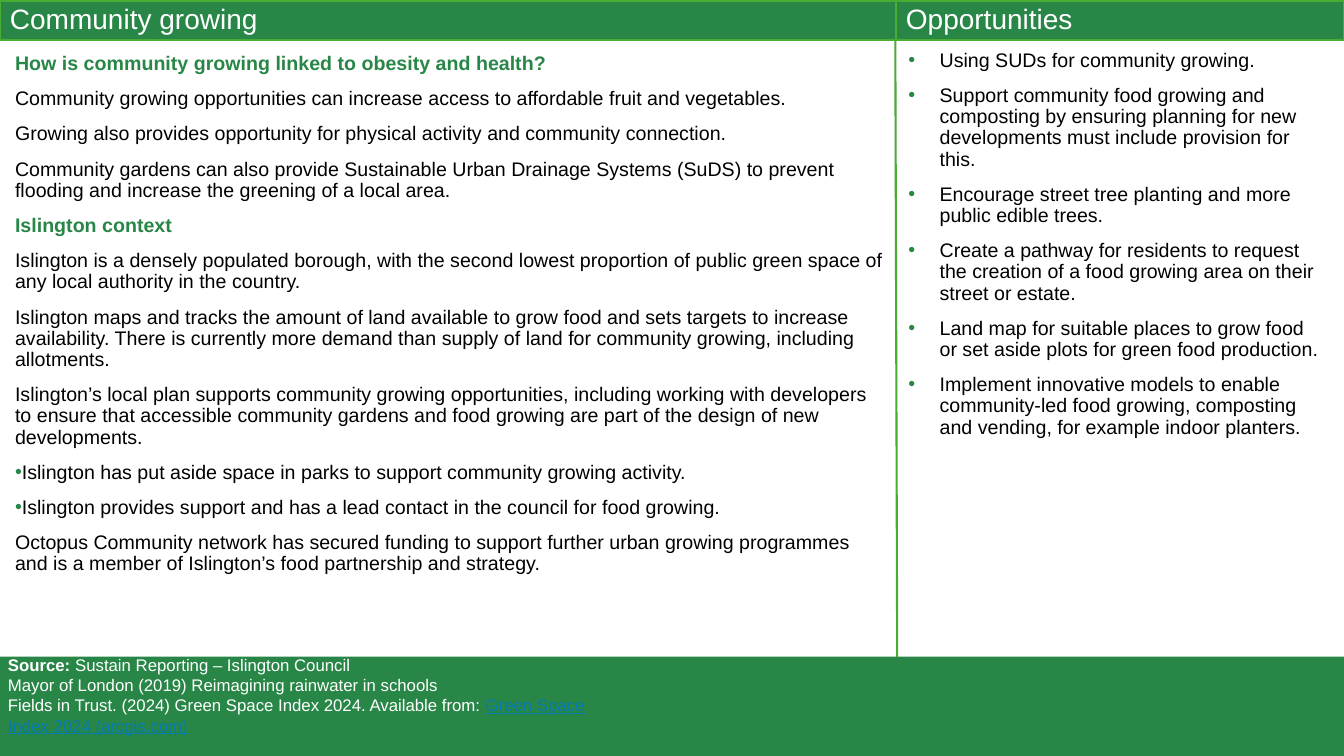
from dataclasses import dataclass

from lxml.etree import SubElement
from pptx import Presentation
from pptx.dml.color import RGBColor
from pptx.enum.shapes import MSO_CONNECTOR, MSO_SHAPE
from pptx.enum.text import MSO_ANCHOR, PP_ALIGN
from pptx.oxml.ns import qn
from pptx.util import Cm, Pt


@dataclass(frozen=True)
class Theme:
    face: str = "Arial"
    green: str = "288647"
    edge: str = "49AC33"
    ink: str = "000000"
    white: str = "FFFFFF"
    link: str = "047CB3"
    title: int = 20
    body: int = 14
    note: int = 12
    gap: int = 10
    lead: float = 0.9
    rule: float = 1.5


def rgb(code):
    return RGBColor.from_string(code)


class Page:
    def __init__(self, slide, theme):
        self.shapes = slide.shapes
        self.theme = theme

    def font(self, para, size, color, bold=False):
        font = para.font
        font.name, font.size, font.bold = self.theme.face, Pt(size), bold
        font.color.rgb = rgb(color)

    def frame(self, shape, anchor, wrap=True):
        """Strip the margins of a shape's text frame and return the frame."""
        frame = shape.text_frame
        frame.margin_left = frame.margin_right = 0
        frame.margin_top = frame.margin_bottom = 0
        frame.vertical_anchor, frame.word_wrap = anchor, wrap
        return frame

    def paras(self, frame, count):
        """Yield count paragraphs, starting with the one already there."""
        for i in range(count):
            yield frame.add_paragraph() if i else frame.paragraphs[0]

    def indent(self, para, left, bullet=False):
        """Set the left indent; a bullet hangs in it."""
        props = para._p.get_or_add_pPr()
        props.set("marL", str(Cm(left)))
        props.set("indent", str(-Cm(left) if bullet else 0))
        if bullet:
            tint = SubElement(props, qn("a:buClr"))
            SubElement(tint, qn("a:srgbClr"), val=self.theme.green)
            SubElement(props, qn("a:buFont"), typeface=self.theme.face)
            SubElement(props, qn("a:buChar"), char="•")

    def block(self, x, y, w, h, edge=None):
        box = self.shapes.add_shape(MSO_SHAPE.RECTANGLE, Cm(x), Cm(y), Cm(w), Cm(h))
        box.shadow.inherit = False
        box.fill.solid()
        box.fill.fore_color.rgb = rgb(self.theme.green)
        if edge:
            box.line.color.rgb = rgb(edge)
            box.line.width = Pt(self.theme.rule)
        else:
            box.line.fill.background()
        return box

    def banner(self, x, y, w, h, text):
        box = self.block(x, y, w, h, self.theme.edge)
        para = self.frame(box, MSO_ANCHOR.MIDDLE).paragraphs[0]
        para.text = text
        para.alignment = PP_ALIGN.LEFT
        para.line_spacing = self.theme.lead
        self.indent(para, 0.25)
        self.font(para, self.theme.title, self.theme.white)

    def rule(self, x1, y1, x2, y2):
        line = self.shapes.add_connector(
            MSO_CONNECTOR.STRAIGHT, Cm(x1), Cm(y1), Cm(x2), Cm(y2))
        line.line.color.rgb = rgb(self.theme.edge)
        line.line.width = Pt(self.theme.rule)
        SubElement(line._element.spPr, qn("a:effectLst"))

    def column(self, x, y, w, h, items, hang=0):
        """Write (kind, text) items, kind being head, text or dot."""
        theme = self.theme
        box = self.shapes.add_textbox(Cm(x), Cm(y), Cm(w), Cm(h))
        frame = self.frame(box, MSO_ANCHOR.TOP)
        for i, para in enumerate(self.paras(frame, len(items))):
            kind, para.text = items[i]
            para.line_spacing = theme.lead
            if i:
                para.space_before = Pt(theme.gap)
            if kind == "dot":
                self.indent(para, hang, True)
            head = kind == "head"
            self.font(para, theme.body, theme.green if head else theme.ink, head)

    def notes(self, x, y, w, h, lines):
        """Write lines of (kind, text) runs, kind being bold, link or plain."""
        theme = self.theme
        box = self.shapes.add_textbox(Cm(x), Cm(y), Cm(w), Cm(h))
        frame = self.frame(box, MSO_ANCHOR.TOP, False)
        for para, line in zip(self.paras(frame, len(lines)), lines):
            self.font(para, theme.note, theme.white)
            for kind, text in line:
                run = para.add_run()
                run.text = text
                if kind == "bold":
                    run.font.bold = True
                elif kind == "link":
                    run.font.underline = True
                    run.font.color.rgb = rgb(theme.link)


GROWING = [
    ("head", "How is community growing linked to obesity and health?"),
    ("text", "Community growing opportunities can increase access to affordable "
             "fruit and vegetables."),
    ("text", "Growing also provides opportunity for physical activity and "
             "community connection."),
    ("text", "Community gardens can also provide Sustainable Urban Drainage Systems "
             "(SuDS) to prevent flooding and increase the greening of a local area."),
    ("head", "Islington context"),
    ("text", "Islington is a densely populated borough, with the second lowest "
             "proportion of public green space of any local authority in the country."),
    ("text", "Islington maps and tracks the amount of land available to grow food "
             "and sets targets to increase availability. There is currently more "
             "demand than supply of land for community growing, including allotments."),
    ("text", "Islington’s local plan supports community growing opportunities, "
             "including working with developers to ensure that accessible community "
             "gardens and food growing are part of the design of new developments."),
    ("dot", "Islington has put aside space in parks to support community growing "
            "activity."),
    ("dot", "Islington provides support and has a lead contact in the council for "
            "food growing."),
    ("text", "Octopus Community network has secured funding to support further urban "
             "growing programmes and is a member of Islington’s food partnership "
             "and strategy."),
]
CHANCES = [
    "Using SUDs for community growing.",
    "Support community food growing and composting by ensuring planning for new "
    "developments must include provision for this.",
    "Encourage street tree planting and more public edible trees.",
    "Create a pathway for residents to request the creation of a food growing area "
    "on their street or estate.",
    "Land map for suitable places to grow food or set aside plots for green food "
    "production.",
    "Implement innovative models to enable community-led food growing, composting "
    "and vending, for example indoor planters.",
]
SOURCES = [
    [("bold", "Source: "), ("plain", "Sustain Reporting – Islington Council")],
    [("plain", "Mayor of London (2019) Reimagining rainwater in schools")],
    [("plain", "Fields in Trust. (2024) Green Space Index 2024. Available from: "),
     ("link", "Green Space Index 2024 (arcgis.com)")],
]


def main():
    deck = Presentation()
    deck.slide_width, deck.slide_height = Cm(33.87), Cm(19.05)
    page = Page(deck.slides.add_slide(deck.slide_layouts[6]), Theme())
    page.block(0, 16.55, 33.87, 2.5)
    page.rule(22.56, 0.05, 22.61, 16.55)
    page.banner(0, 0.02, 22.6, 1, "Community growing")
    page.column(0.38, 1.35, 21.9, 14.75, GROWING)
    page.banner(22.58, 0.02, 11.29, 1, "Opportunities")
    page.column(22.89, 1.27, 10.52, 15, [("dot", text) for text in CHANCES], 0.79)
    page.notes(0.2, 16.5, 15.2, 2.55, SOURCES)
    deck.save("out.pptx")


if __name__ == "__main__":
    main()
